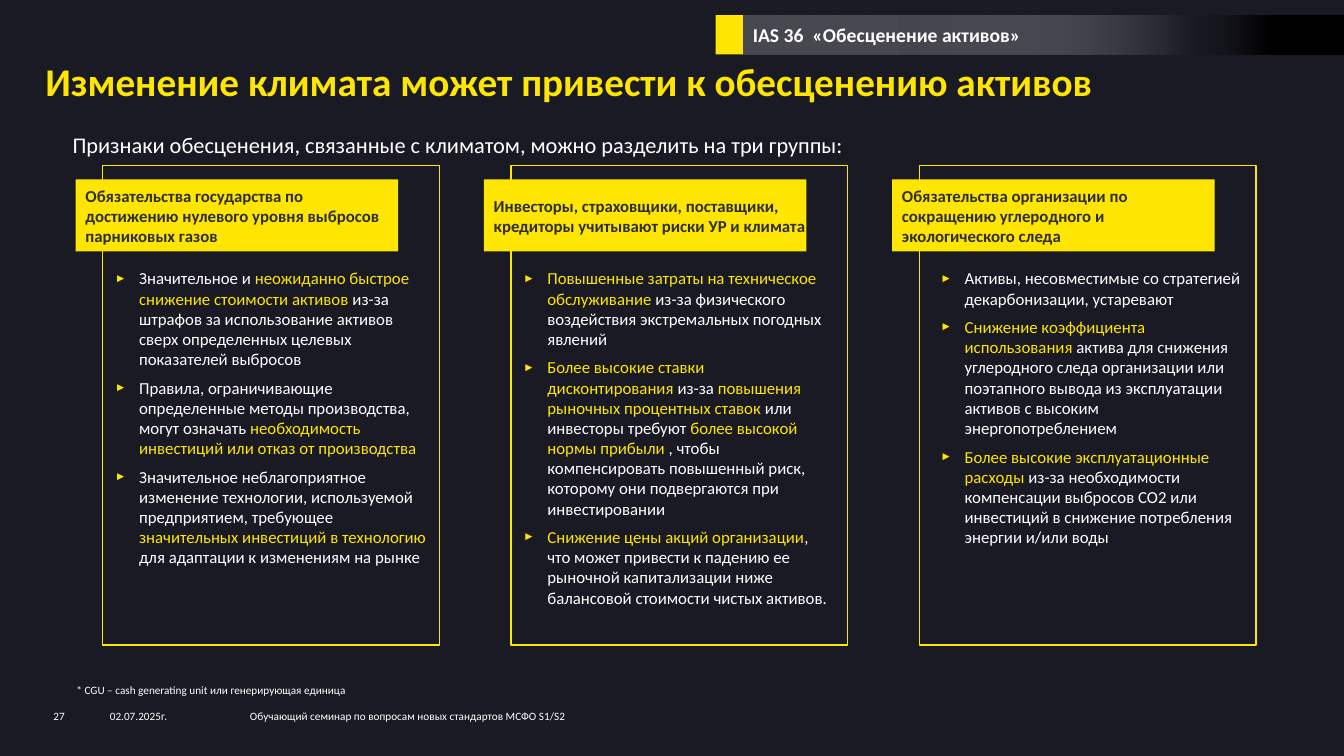
from lxml import etree
from pptx import Presentation
from pptx.dml.color import RGBColor
from pptx.enum import shapes, text
from pptx.oxml import ns
from pptx.util import Pt

YELLOW = RGBColor(0xFF, 0xE6, 0x00)
WHITE = RGBColor(0xFF, 0xFF, 0xFF)
GREY = RGBColor(0x2E, 0x2E, 0x38)
NIGHT = RGBColor(0x1A, 0x1A, 0x24)
BLACK = RGBColor(0x00, 0x00, 0x00)

COLUMNS = [
    ("Обязательства государства по достижению нулевого уровня выбросов парниковых газов", 8.64, [
        [("Значительное и ", WHITE),
         ("неожиданно быстрое снижение стоимости активов", YELLOW),
         (" из-за штрафов за использование активов сверх определенных целевых показателей выбросов", WHITE)],
        [("Правила, ограничивающие определенные методы производства, могут означать ", WHITE),
         ("необходимость инвестиций или отказ от производства", YELLOW)],
        [("Значительное неблагоприятное изменение технологии, используемой предприятием, требующее ", WHITE),
         ("значительных инвестиций в технологию", YELLOW),
         (" для адаптации к изменениям на рынке", WHITE)],
    ]),
    ("Инвесторы, страховщики, поставщики, кредиторы учитывают риски УР и климата", 8.64, [
        [("Повышенные затраты на техническое обслуживание ", YELLOW),
         ("из-за физического воздействия экстремальных погодных явлений", WHITE)],
        [("Более высокие ставки дисконтирования ", YELLOW),
         ("из-за ", WHITE),
         ("повышения рыночных процентных ставок ", YELLOW),
         ("или инвесторы требуют ", WHITE),
         ("более высокой нормы прибыли", YELLOW),
         (" , чтобы компенсировать повышенный риск, которому они подвергаются при инвестировании", WHITE)],
        [("Снижение цены акций организации", YELLOW),
         (", что может привести к падению ее рыночной капитализации ниже балансовой стоимости чистых активов.", WHITE)],
    ]),
    ("Обязательства организации по сокращению углеродного и экологического следа", 15.12, [
        [("Активы, несовместимые со стратегией декарбонизации, устаревают", WHITE)],
        [("Снижение коэффициента использования ", YELLOW),
         ("актива для снижения углеродного следа организации или поэтапного вывода из эксплуатации активов с высоким энергопотреблением", WHITE)],
        [("Более высокие эксплуатационные расходы ", YELLOW),
         ("из-за необходимости компенсации выбросов CO2 или инвестиций в снижение потребления энергии и/или воды", WHITE)],
    ]),
]


def write(box, paragraphs, size, bold=False, margins=(0, 0, 0, 0),
          anchor=text.MSO_ANCHOR.TOP, after=0, bullet=False):
    frame = box.text_frame
    frame.word_wrap = True
    frame.auto_size = text.MSO_AUTO_SIZE.NONE
    frame.vertical_anchor = anchor
    frame.margin_left, frame.margin_top, frame.margin_right, frame.margin_bottom = map(Pt, margins)
    for number, spans in enumerate(paragraphs):
        para = frame.add_paragraph() if number else frame.paragraphs[0]
        para.alignment = text.PP_ALIGN.LEFT
        para.line_spacing = 1.0
        para.space_before = Pt(0)
        para.space_after = Pt(after)
        if bullet:
            props = para._p.get_or_add_pPr()
            props.set("marL", str(Pt(17.28)))
            props.set("indent", str(-Pt(17.28)))
            colour = etree.SubElement(props, ns.qn("a:buClr"))
            etree.SubElement(colour, ns.qn("a:srgbClr"), val=str(YELLOW))
            etree.SubElement(props, ns.qn("a:buSzPct"), val="70000")
            etree.SubElement(props, ns.qn("a:buFont"), typeface="Arial")
            etree.SubElement(props, ns.qn("a:buChar"), char="►")
        for words, ink in spans:
            span = para.add_run()
            span.text = words
            span.font.name = "Calibri"
            span.font.size = Pt(size)
            span.font.bold = bold
            span.font.color.rgb = ink


def add_rectangle(left, top, width, height, fill=None):
    box = page.shapes.add_shape(shapes.MSO_SHAPE.RECTANGLE, Pt(left), Pt(top), Pt(width), Pt(height))
    box.shadow.inherit = False
    box.line.fill.background()
    if fill is None:
        box.fill.background()
    else:
        box.fill.solid()
        box.fill.fore_color.rgb = fill
    return box


deck = Presentation()
deck.slide_width, deck.slide_height = Pt(960), Pt(540)
page = deck.slides.add_slide(deck.slide_layouts[4])
page.background.fill.solid()
page.background.fill.fore_color.rgb = NIGHT
title, intro, *lists = page.placeholders

title.left, title.top, title.width, title.height = Pt(32.4), Pt(36.72), Pt(921.6), Pt(46.8)
write(title, [[("Изменение климата может привести к обесценению активов", YELLOW)]], 28,
      bold=True, anchor=text.MSO_ANCHOR.MIDDLE)
title.text_frame.paragraphs[0].line_spacing = 0.85

intro.left, intro.top, intro.width, intro.height = Pt(44.64), Pt(90), Pt(867.6), Pt(26.64)
write(intro, [[("Признаки обесценения, связанные с климатом, можно разделить на три группы:", WHITE)]], 16,
      margins=(7.2, 3.6, 7.2, 3.6))
intro_props = intro.text_frame.paragraphs[0]._p.get_or_add_pPr()
etree.SubElement(intro_props, ns.qn("a:buNone"))

band = add_rectangle(530.64, 10.8, 429.36, 28.08, BLACK)
gradient = etree.Element(ns.qn("a:gradFill"), rotWithShape="1")
stops = etree.SubElement(gradient, ns.qn("a:gsLst"))
for position, shade, opacity in [(0, BLACK, 100), (12, BLACK, 100), (25, NIGHT, 37), (52, WHITE, 20),
                                 (64, WHITE, 20), (74, WHITE, 18), (74, WHITE, 20), (83, WHITE, 20)]:
    stop = etree.SubElement(stops, ns.qn("a:gs"), pos=str(position * 1000))
    colour = etree.SubElement(stop, ns.qn("a:srgbClr"), val=str(shade))
    etree.SubElement(colour, ns.qn("a:alpha"), val=str(opacity * 1000))
etree.SubElement(gradient, ns.qn("a:lin"), ang="10800000", scaled="0")
solid = band._element.spPr.find(ns.qn("a:solidFill"))
solid.getparent().replace(solid, gradient)
add_rectangle(511.2, 10.8, 19.44, 28.08, YELLOW)

for column, (heading, list_offset, items) in enumerate(COLUMNS):
    left = 73.44 + 291.6 * column
    border = add_rectangle(left, 118.08, 240.48, 342.72)
    border.line.color.rgb = YELLOW
    border.line.width = Pt(1)
    label = add_rectangle(left - 19.44, 128.16, 230.4, 51.5, YELLOW)
    write(label, [[(heading, GREY)]], 12, bold=True, margins=(7.2, 0, 0, 0),
          anchor=text.MSO_ANCHOR.MIDDLE)
    body = lists[column]
    body.left, body.top, body.width, body.height = Pt(left + list_offset), Pt(191.52), Pt(222.48), Pt(243.36)
    write(body, items, 12, after=6, bullet=True)
    page.shapes._spTree.append(body._element)

for words, left, top, width, height, size, bold, margins in [
    ("IAS 36  «Обесценение активов»", 530.64, 12.96, 351.36, 24.48, 14, True, (7.2, 3.6, 7.2, 3.6)),
    ("* CGU – cash generating unit или генерирующая единица", 47.52, 484.56, 854.64, 17.28, 8, False,
     (7.2, 3.6, 7.2, 3.6)),
    ("27", 38.16, 506.88, 40.32, 9.36, 8, False, (0, 0, 0, 0)),
    ("02.07.2025г.", 78.48, 506.88, 100.8, 9.36, 8, False, (0, 0, 0, 0)),
    ("Обучающий семинар по вопросам новых стандартов МСФО S1/S2", 178.56, 506.88, 300.96, 9.36, 8, False,
     (0, 0, 0, 0)),
]:
    box = page.shapes.add_textbox(Pt(left), Pt(top), Pt(width), Pt(height))
    write(box, [[(words, WHITE)]], size, bold=bold, margins=margins)

deck.save("out.pptx")
